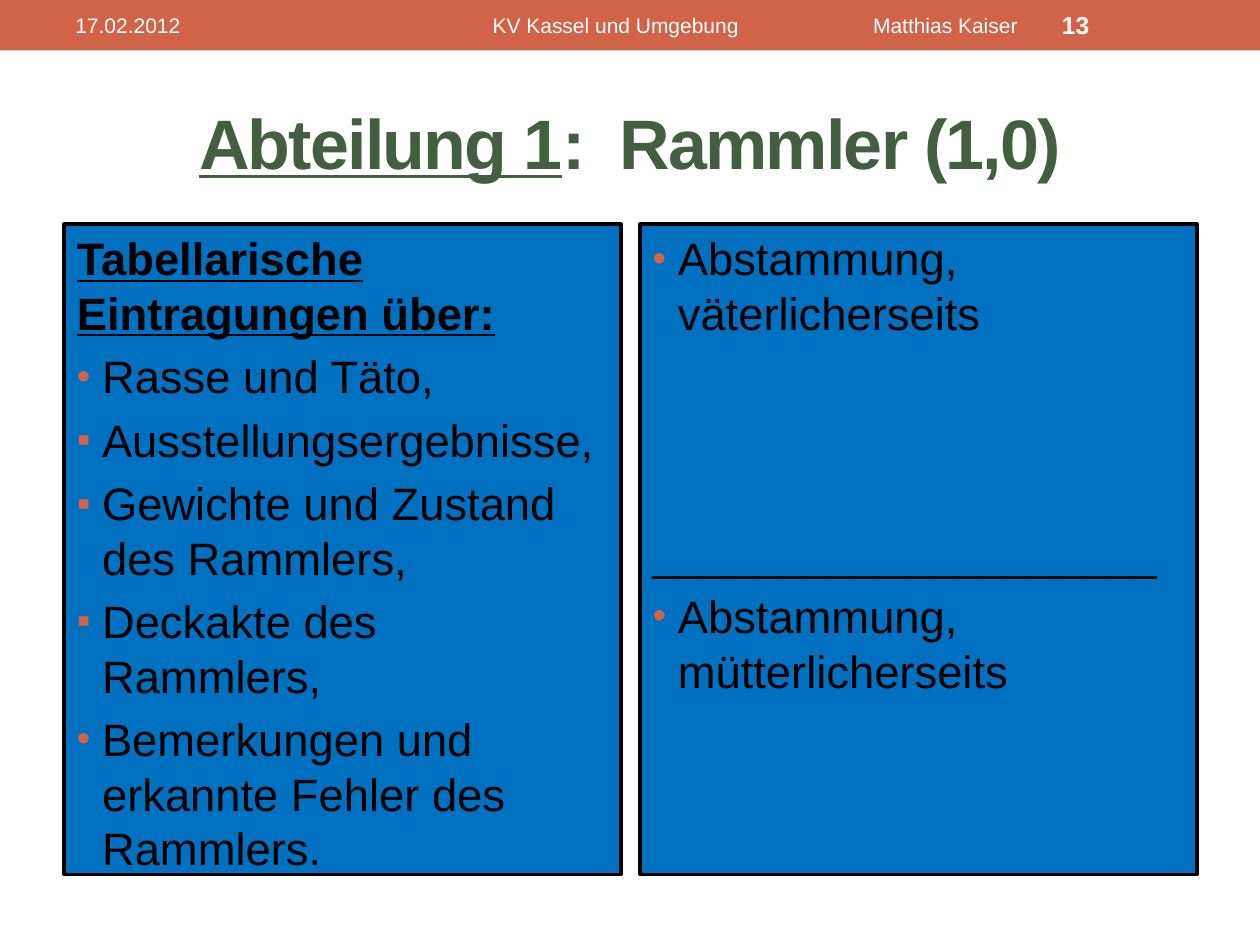
from lxml import etree
from pptx import Presentation, util as u
from pptx.dml.color import RGBColor
from pptx.enum import shapes, text
from pptx.oxml.ns import qn

ACCENT, GREEN, BLUE, BLACK, WHITE = "D16349", "435E40", "0070C0", "000000", "FFFFFF"
BODY_SIZE = 25.9
PARAGRAPH_GAP = 5.2


def colour(hex_value):
    return RGBColor.from_string(hex_value)


def place(part, left, top, width, height):
    box = dict(left=left, top=top, width=width, height=height)
    for side, inches in box.items():
        setattr(part, side, u.Inches(inches))


def add_run(paragraph, words, size, ink, **formats):
    run = paragraph.add_run()
    run.text = words
    run.font.color.rgb = colour(ink)
    for name, value in dict(name="Arial", size=u.Pt(size), **formats).items():
        setattr(run.font, name, value)
    return run


def add_xml(paragraph, tag, **attributes):
    return etree.SubElement(paragraph._p.get_or_add_pPr(), qn(tag), attributes)


def set_bullet(paragraph, mark):
    """Hang the paragraph on a coloured mark, or clear the bullet if mark is None."""
    indent = u.Inches(0.2) if mark else 0
    properties = paragraph._p.get_or_add_pPr()
    properties.set("marL", str(indent))
    properties.set("indent", str(-indent))
    if not mark:
        add_xml(paragraph, "a:buNone")
        return
    etree.SubElement(add_xml(paragraph, "a:buClr"), qn("a:srgbClr"), val=ACCENT)
    add_xml(paragraph, "a:buSzPct", val="85000")
    add_xml(paragraph, "a:buFont", typeface="Arial")
    add_xml(paragraph, "a:buChar", char=mark)


def add_banner(slide):
    banner = slide.shapes.add_shape(shapes.MSO_SHAPE.RECTANGLE, 0, 0, u.Inches(10), u.Inches(0.4))
    banner.shadow.inherit = False
    banner.fill.solid()
    banner.fill.fore_color.rgb = colour(ACCENT)
    banner.line.fill.background()


def add_banner_text(slide, left, width, words, size=12, inset=0.1, tab=None, **formats):
    label = slide.shapes.add_textbox(0, 0, 0, 0)
    place(label, left, 0.02, width, 0.36)
    frame = label.text_frame
    frame.word_wrap = True
    frame.vertical_anchor = text.MSO_ANCHOR.MIDDLE
    frame.margin_left = u.Inches(inset)
    paragraph = frame.paragraphs[0]
    add_run(paragraph, words, size, WHITE, **formats)
    if tab:
        stops = add_xml(paragraph, "a:tabLst")
        etree.SubElement(stops, qn("a:tab"), pos=str(u.Inches(tab)), algn="l")


def fill_title(title):
    place(title, 0.5, 0.58, 9, 1.08)
    title.text_frame.vertical_anchor = text.MSO_ANCHOR.MIDDLE
    heading = title.text_frame.paragraphs[0]
    heading.alignment = text.PP_ALIGN.CENTER
    for words, underlined in (("Abteilung 1", True), (":  Rammler (1,0)", False)):
        run = add_run(heading, words, 40, GREEN, bold=True, underline=underlined)
        run._r.get_or_add_rPr().set("spc", "-100")


def fill_panel(panel, left, entries):
    """Each entry is bullet mark, words, space before and font formats."""
    place(panel, left, 1.78, 4.42, 5.16)
    panel.fill.solid()
    panel.fill.fore_color.rgb = colour(BLUE)
    panel.line.color.rgb = colour(BLACK)
    panel.line.width = u.Pt(2.08)
    frame = panel.text_frame
    frame.auto_size = text.MSO_AUTO_SIZE.NONE
    for number, (mark, words, gap, formats) in enumerate(entries):
        paragraph = frame.add_paragraph() if number else frame.paragraphs[0]
        paragraph.line_spacing = 1.0
        paragraph.space_before = u.Pt(gap)
        set_bullet(paragraph, mark)
        add_run(paragraph, words, BODY_SIZE, BLACK, **formats)


def main():
    deck = Presentation()
    deck.slide_width, deck.slide_height = u.Inches(10), u.Inches(7.5)
    slide = deck.slides.add_slide(deck.slide_layouts[3])
    title, records, ancestry = slide.placeholders

    # Banner with date, event, speaker and page number
    add_banner(slide)
    add_banner_text(slide, 0.5, 3.17, "17.02.2012")
    add_banner_text(slide, 3.75, 4.5, "KV Kassel und Umgebung\tMatthias Kaiser", inset=0.16, tab=3.02)
    add_banner_text(slide, 8.33, 1.17, "13", size=14, bold=True)

    fill_title(title)

    # Left panel: what is recorded
    record_items = (
        ("•", "Rasse und Täto,"),
        ("▪", "Ausstellungsergebnisse,"),
        ("▪", "Gewichte und Zustand des Rammlers,"),
        ("▪", "Deckakte des Rammlers,"),
        ("•", "Bemerkungen und erkannte Fehler des Rammlers."),
    )
    intro = (None, "Tabellarische Eintragungen über:", PARAGRAPH_GAP, dict(bold=True, underline=True))
    fill_panel(records, 0.51, [intro] + [(mark, words, PARAGRAPH_GAP, {}) for mark, words in record_items])

    # Right panel: ancestry on both sides, parted by a rule
    fill_panel(ancestry, 5.08, [
        ("•", "Abstammung, väterlicherseits", PARAGRAPH_GAP, {}),
        (None, "_" * 20, 106, {}),
        ("•", "Abstammung, mütterlicherseits", PARAGRAPH_GAP, {}),
    ])

    deck.save("out.pptx")


if __name__ == "__main__":
    main()
